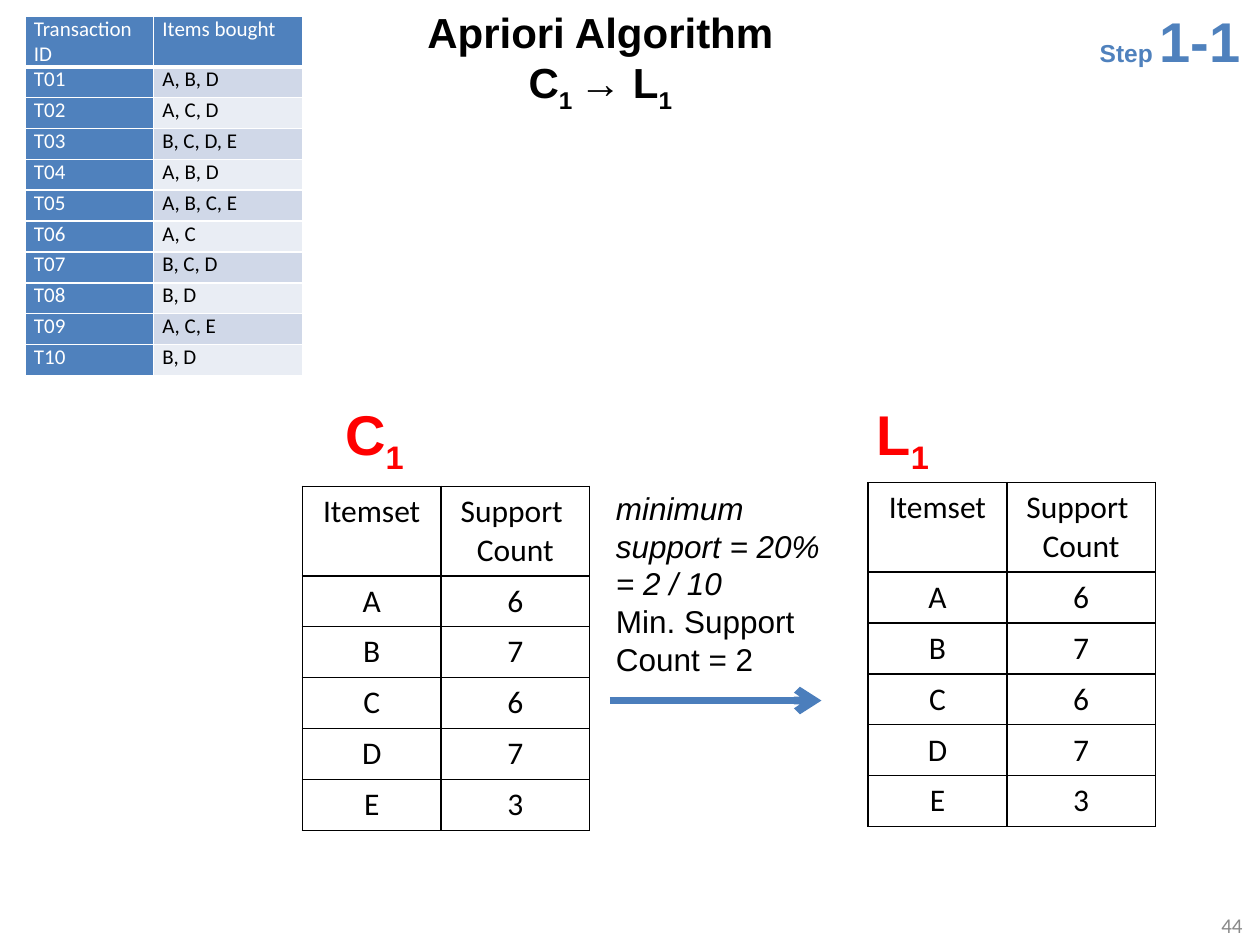
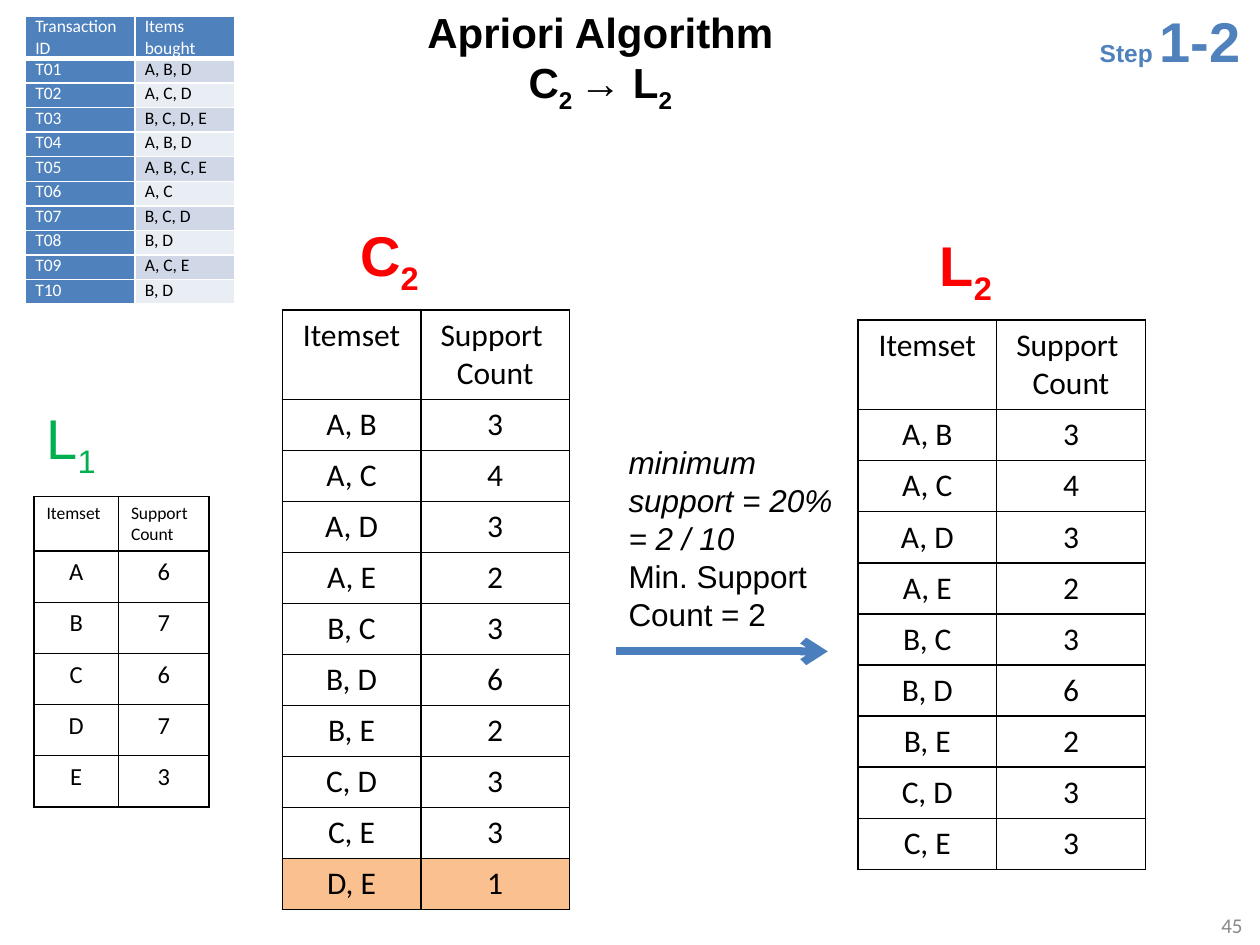
import copy
import dataclasses

import lxml.etree
import pptx
import pptx.dml.color
import pptx.enum.shapes
import pptx.enum.text
import pptx.oxml.ns
import pptx.util

Inches = pptx.util.Inches
Align = pptx.enum.text.PP_ALIGN
Anchor = pptx.enum.text.MSO_ANCHOR
qn = pptx.oxml.ns.qn


@dataclasses.dataclass(frozen=True)
class Theme:
    """Colours, fonts and type sizes shared by the slides."""
    black: str = "000000"
    white: str = "FFFFFF"
    blue: str = "4F81BD"
    arrow: str = "4B7EBC"
    bands: tuple = ("D0D8E8", "E9EDF4")
    red: str = "FF0000"
    green: str = "00B050"
    pruned: str = "FAC090"
    grey: str = "898989"
    heading_font: str = "Arial"
    table_font: str = "Calibri"
    label_size: int = 32
    title_size: int = 24
    body_size: int = 18
    step_size: int = 14
    number_size: int = 12
    small_size: int = 10


THEME = Theme()
TRANSACTIONS = ["A, B, D", "A, C, D", "B, C, D, E", "A, B, D", "A, B, C, E",
                "A, C", "B, C, D", "B, D", "A, C, E", "B, D"]
SINGLES = [("A", 6), ("B", 7), ("C", 6), ("D", 7), ("E", 3)]
PAIRS = [("A, B", 3), ("A, C", 4), ("A, D", 3), ("A, E", 2), ("B, C", 3),
         ("B, D", 6), ("B, E", 2), ("C, D", 3), ("C, E", 3), ("D, E", 1)]
MINIMUM_COUNT = 2


def set_values(target, values):
    """Set each named attribute of the target."""
    for name, value in values.items():
        setattr(target, name, value)


def style(size, color, font=THEME.heading_font, **extra):
    """Return the format values of a span."""
    return {"size": size, "color": color, "name": font, **extra}


def add_span(para, text, look):
    """Add a formatted span, turning newlines into line breaks."""
    values = dict(look)
    color, baseline = values.pop("color"), values.pop("baseline", None)
    values["size"] = pptx.util.Pt(values["size"])
    for index, line in enumerate(text.split("\n")):
        if index:
            para.add_line_break()
            para._p[-1].append(copy.deepcopy(span._r.rPr))
        span = para.add_run()
        span.text = line
        set_values(span.font, values)
        span.font.color.rgb = pptx.dml.color.RGBColor.from_string(color)
        if baseline:
            span._r.get_or_add_rPr().set("baseline", str(baseline))


def fill_frame(frame, paragraphs, align=Align.LEFT):
    """Write paragraphs, each a list of (text, look) spans, into a frame."""
    for index, spans in enumerate(paragraphs):
        para = frame.add_paragraph() if index else frame.paragraphs[0]
        para.alignment = align
        for text, look in spans:
            add_span(para, text, look)


def with_index(letter, index, look):
    """Return spans for a letter followed by a subscript."""
    return [(letter, look), (index, {**look, "baseline": -25000})]


def add_text(page, at, paragraphs, align=Align.LEFT, **frame_values):
    """Add a text box."""
    box = page.shapes.add_textbox(*map(Inches, at))
    set_values(box.text_frame, {"word_wrap": False, **frame_values})
    fill_frame(box.text_frame, paragraphs, align)


def add_title(page, index):
    """Fill the title placeholder with the algorithm and its step."""
    title = page.shapes.title
    set_values(title, dict(zip(("left", "top", "width", "height"),
                               map(Inches, (3.11, 0, 3.31, 0.91)))))
    set_values(title.text_frame, {"vertical_anchor": Anchor.TOP, "word_wrap": True,
                                  "auto_size": pptx.enum.text.MSO_AUTO_SIZE.NONE})
    look = style(THEME.title_size, THEME.black, bold=True)
    formula = with_index("C", index + " ", look) + with_index("→ L", index, look)
    fill_frame(title.text_frame, [[("Apriori Algorithm", look)], formula], Align.CENTER)


def add_step(page, step):
    """Add the step mark in the top right corner."""
    look = style(THEME.step_size, THEME.blue, bold=True)
    add_text(page, (8.63, 0, 1.33, 0.64),
             [[("Step ", look), (step, {**look, "size": THEME.label_size})]])


def add_number(page, number):
    """Add the slide number in the bottom right corner."""
    look = style(THEME.number_size, THEME.grey, THEME.table_font)
    add_text(page, (9.33, 7.22, 0.63, 0.25), [[(str(number), look)]], Align.RIGHT,
             vertical_anchor=Anchor.MIDDLE, word_wrap=True)


def add_label(page, left, top, letter, index, color=THEME.red, bold=True):
    """Add the large name of an itemset table."""
    width = 0.69 if letter == "C" else 0.64 if bold else 0.62
    look = style(THEME.label_size, color, bold=bold)
    add_text(page, (left, top, width, 0.64), [with_index(letter, index, look)])


def add_rule(page, left, top):
    """Add the minimum support rule."""
    plain = style(THEME.body_size, THEME.black)
    slanted = {**plain, "italic": True}
    add_text(page, (left, top, 1.84, 1.62),
             [[("minimum \nsupport = 20%", slanted)], [("= 2 / 10", slanted)],
              [("Min. Support \nCount = 2", plain)]])


def add_arrow(page, left, top, length=1.68):
    """Add a thick horizontal arrow pointing right."""
    line = page.shapes.add_connector(pptx.enum.shapes.MSO_CONNECTOR.STRAIGHT,
                                     *map(Inches, (left, top, left + length, top)))
    line.line.color.rgb = pptx.dml.color.RGBColor.from_string(THEME.arrow)
    line.line.width = pptx.util.Pt(4.5)
    lxml.etree.SubElement(line.line._get_or_add_ln(), qn("a:tailEnd"), type="arrow")
    lxml.etree.SubElement(line._element.spPr, qn("a:effectLst"))


def set_borders(cell, color, bottom=1):
    """Draw all four borders of a cell."""
    properties = cell._tc.get_or_add_tcPr()
    for index, (side, points) in enumerate(zip("LRTB", (1, 1, 1, bottom))):
        border = lxml.etree.Element(qn("a:ln" + side), w=str(pptx.util.Pt(points)))
        solid = lxml.etree.SubElement(border, qn("a:solidFill"))
        lxml.etree.SubElement(solid, qn("a:srgbClr"), val=color)
        properties.insert(index, border)


def add_grid(page, at, columns, header_height, row_count):
    """Add an unstyled table with a header and equal body rows."""
    grid = page.shapes.add_table(row_count + 1, len(columns), *map(Inches, at)).table
    set_values(grid, {"first_row": False, "horz_banding": False})
    for column, width in zip(grid.columns, columns):
        column.width = Inches(width)
    body_height = (at[3] - header_height) / row_count
    for index, row in enumerate(grid.rows):
        row.height = Inches(body_height if index else header_height)
    return grid


def fill_cell(cell, text, look, fill=None, align=Align.LEFT, margins=(0.1, 0.05)):
    """Write a cell and set its margins and fill."""
    side, edge = map(Inches, margins)
    set_values(cell, {"margin_left": side, "margin_right": side,
                      "margin_top": edge, "margin_bottom": edge})
    fill_frame(cell.text_frame, [[(text, look)]], align)
    if fill:
        cell.fill.solid()
        cell.fill.fore_color.rgb = pptx.dml.color.RGBColor.from_string(fill)
    else:
        cell.fill.background()


def add_transactions(page, size, columns, height, header_height, side):
    """Add the banded table of transactions."""
    grid = add_grid(page, (0.2, 0.13, sum(columns), height), columns,
                    header_height, len(TRANSACTIONS))
    rows = [("Transaction ID", "Items bought")]
    rows += [(f"T{number:02}", items) for number, items in enumerate(TRANSACTIONS, 1)]
    for row, texts in enumerate(rows):
        for column, text in enumerate(texts):
            dark = row == 0 or column == 0
            look = style(size, THEME.white if dark else THEME.black, THEME.table_font)
            fill = THEME.blue if dark else THEME.bands[(row - 1) % 2]
            cell = grid.cell(row, column)
            fill_cell(cell, text, look, fill, margins=(side, 0))
            set_borders(cell, THEME.white, 1 if row else 3)


def add_itemsets(page, left, top, counts, height, columns=(1.1, 1.18), header_height=0.71,
                 header_size=THEME.body_size, body_size=THEME.body_size,
                 header_align=Align.CENTER):
    """Add a ruled table of itemsets, marking those below the minimum."""
    grid = add_grid(page, (left, top, sum(columns), height), columns,
                    header_height, len(counts))
    for row, values in enumerate([("Itemset", "Support \nCount"), *counts]):
        pruned = row > 0 and values[1] < MINIMUM_COUNT
        look = style(body_size if row else header_size, THEME.black, THEME.table_font)
        for column, value in enumerate(values):
            cell = grid.cell(row, column)
            fill_cell(cell, str(value), look, THEME.pruned if pruned else None,
                      Align.CENTER if row else header_align)
            set_borders(cell, THEME.black)


def add_page(deck, index, number):
    """Add a slide with its title, step mark and number."""
    page = deck.slides.add_slide(deck.slide_layouts[5])
    add_title(page, index)
    add_step(page, "1-" + index)
    add_number(page, number)
    return page


def add_first_pass(deck):
    """Build the slide for single items."""
    page = add_page(deck, "1", 44)
    add_transactions(page, 12, (1.02, 1.18), 2.85, 0.4, 0.07)
    add_itemsets(page, 2.4, 3.86, SINGLES, 2.73)
    add_itemsets(page, 6.89, 3.83, SINGLES, 2.73)
    add_label(page, 2.64, 3.12, "C", "1")
    add_label(page, 6.86, 3.12, "L", "1")
    add_rule(page, 4.79, 3.83)
    add_arrow(page, 4.84, 5.56)


def add_second_pass(deck):
    """Build the slide for pairs of items."""
    page = add_page(deck, "2", 45)
    frequent = [pair for pair in PAIRS if pair[1] >= MINIMUM_COUNT]
    add_transactions(page, THEME.small_size, (0.87, 0.79), 2.28, 0.33, 0.08)
    add_itemsets(page, 2.24, 2.46, PAIRS, 4.76)
    add_itemsets(page, 6.81, 2.54, frequent, 4.36)
    add_itemsets(page, 0.27, 3.94, SINGLES, 2.46, (0.67, 0.72), 0.43,
                 THEME.small_size, 14, Align.LEFT)
    add_label(page, 2.76, 1.7, "C", "2")
    add_label(page, 7.36, 1.78, "L", "2")
    add_label(page, 0.27, 3.15, "L", "1", THEME.green, False)
    add_rule(page, 4.89, 3.47)
    add_arrow(page, 4.89, 5.17)


def main():
    """Build and save the deck."""
    deck = pptx.Presentation()
    set_values(deck, {"slide_width": Inches(10), "slide_height": Inches(7.5)})
    add_first_pass(deck)
    add_second_pass(deck)
    deck.save("out.pptx")


if __name__ == "__main__":
    main()
